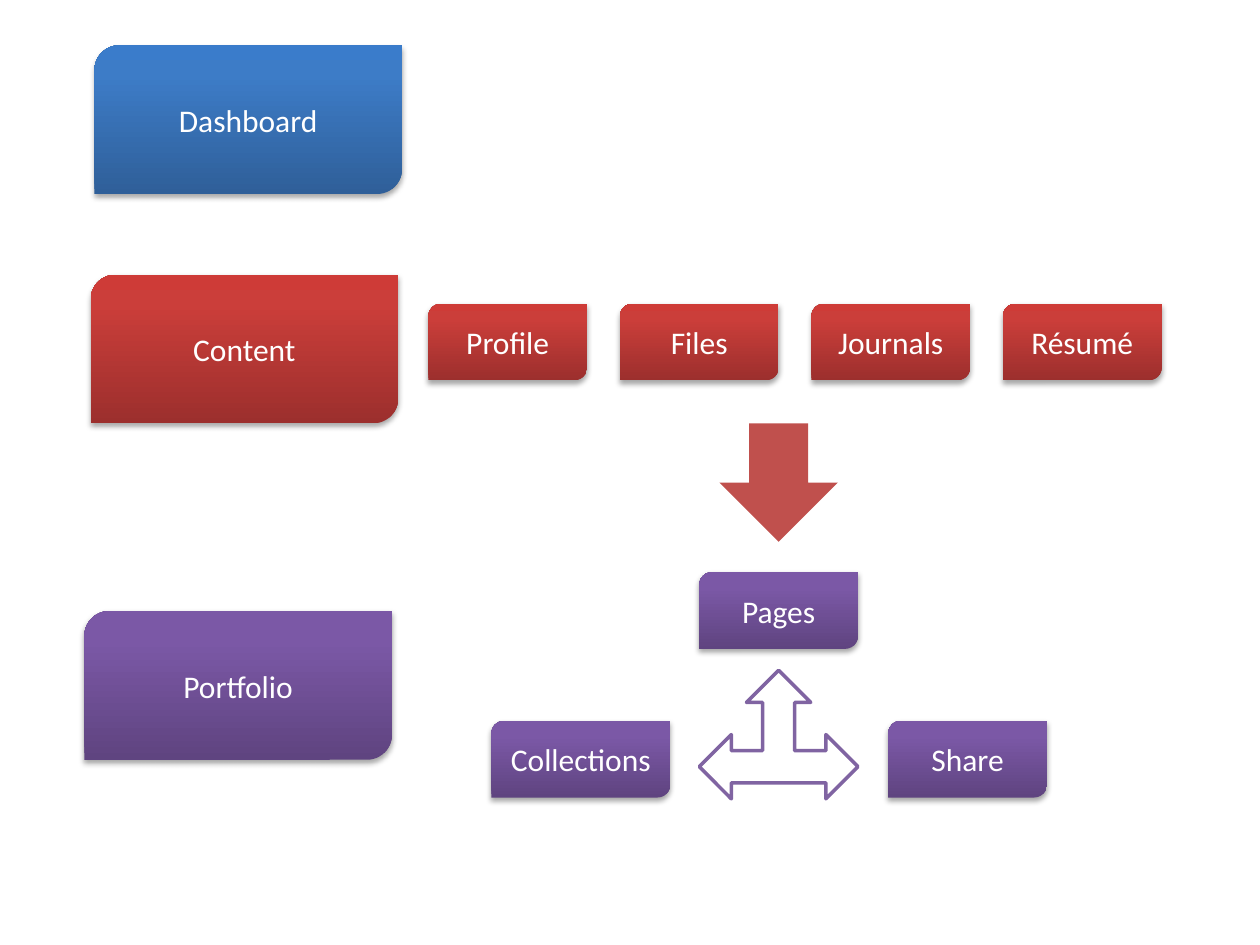
from dataclasses import dataclass

from lxml import etree
from pptx import Presentation
from pptx import util as u
from pptx.dml.color import RGBColor
from pptx.enum import shapes, text
from pptx.oxml.ns import qn


@dataclass(frozen=True)
class Theme:
    """Colours and type sizes; gradients run from bottom to top."""
    blue: tuple = ("2F5F99", "3D7CC7", "3A7CCB")
    red: tuple = ("9C2F2D", "CB3E3A", "CE3B37")
    purple: tuple = ("5F4480", "7B58A6", "7C57A8")
    stops: tuple = (0, 80, 100)
    down_fill: str = "C0504D"
    outline: str = "8064A2"
    white: str = "FFFFFF"
    shadow: str = "000000"
    font: str = "Calibri"
    label_size: int = 18


THEME = Theme()
SECTION_SIZE = (2.44, 1.18)
ITEM_SIZE = (1.26, 0.61)
WIDE_ITEM_SIZE = (1.42, 0.61)


def set_values(target, values):
    """Set each named attribute of the target."""
    for name, value in values.items():
        setattr(target, name, value)


def add_colour(parent, colour):
    """Append an RGB colour element and return it."""
    return etree.SubElement(parent, qn("a:srgbClr"), val=colour)


def add_preset(slide, preset, place, size):
    """Add a preset shape without an inherited shadow."""
    preset_shape = slide.shapes.add_shape(preset, *map(u.Inches, place + size))
    preset_shape.shadow.inherit = False
    return preset_shape


def shade(card, colours):
    """Fill a card with a vertical gradient."""
    card.fill.gradient()
    card.fill.gradient_angle = 90
    stop_list = next(card.element.spPr.iter(qn("a:gsLst")))
    for default_stop in list(stop_list):
        stop_list.remove(default_stop)
    for position, colour in zip(THEME.stops, colours):
        stop = etree.SubElement(stop_list, qn("a:gs"), pos=str(position * 1000))
        add_colour(stop, colour)


def drop_shadow(card):
    """Give a card a soft shadow that falls downwards."""
    effects = card.element.spPr.find(qn("a:effectLst"))
    shadow = etree.SubElement(
        effects, qn("a:outerShdw"), blurRad=str(u.Pt(3.1)), dist=str(u.Pt(1.8)),
        dir="5400000", rotWithShape="0")
    etree.SubElement(add_colour(shadow, THEME.shadow), qn("a:alpha"), val="35000")


def add_card(slide, label, place, size, colours):
    """Add a labelled card with two rounded corners."""
    card = add_preset(slide, shapes.MSO_SHAPE.ROUND_2_DIAG_RECTANGLE, place, size)
    card.line.fill.background()
    shade(card, colours)
    drop_shadow(card)
    set_values(card.text_frame, {
        "text": label, "word_wrap": True, "vertical_anchor": text.MSO_ANCHOR.MIDDLE})
    paragraph = card.text_frame.paragraphs[0]
    paragraph.alignment = text.PP_ALIGN.CENTER
    font = paragraph.runs[0].font
    set_values(font, {"name": THEME.font, "size": u.Pt(THEME.label_size)})
    font.color.rgb = RGBColor.from_string(THEME.white)


def add_arrow(slide, preset, place, size, fill, outline=None):
    """Add a block arrow, outlined when a colour is given."""
    arrow = add_preset(slide, preset, place, size)
    arrow.fill.solid()
    arrow.fill.fore_color.rgb = RGBColor.from_string(fill)
    if outline:
        arrow.line.color.rgb = RGBColor.from_string(outline)
        arrow.line.width = u.Pt(2)
    else:
        arrow.line.fill.background()


def main():
    """Build the map from dashboard and content to portfolio."""
    deck = Presentation()
    set_values(deck, {"slide_width": u.Inches(10), "slide_height": u.Inches(7.5)})
    slide = deck.slides.add_slide(deck.slide_layouts[6])

    for label, place, colours in (
            ("Dashboard", (0.75, 0.36), THEME.blue),
            ("Content", (0.72, 2.18), THEME.red),
            ("Portfolio", (0.67, 4.85), THEME.purple)):
        add_card(slide, label, place, SECTION_SIZE, colours)

    for column, label in enumerate(("Profile", "Files", "Journals", "Résumé")):
        add_card(slide, label, (3.4 + 1.52 * column, 2.41), ITEM_SIZE, THEME.red)

    for label, place, size in (
            ("Pages", (5.55, 4.54), ITEM_SIZE),
            ("Collections", (3.9, 5.72), WIDE_ITEM_SIZE),
            ("Share", (7.05, 5.72), ITEM_SIZE)):
        add_card(slide, label, place, size, THEME.purple)

    add_arrow(slide, shapes.MSO_SHAPE.LEFT_RIGHT_UP_ARROW, (5.55, 5.32),
              (1.26, 1.02), THEME.white, THEME.outline)
    add_arrow(slide, shapes.MSO_SHAPE.DOWN_ARROW, (5.71, 3.36),
              (0.94, 0.94), THEME.down_fill)
    deck.save("out.pptx")


if __name__ == "__main__":
    main()
